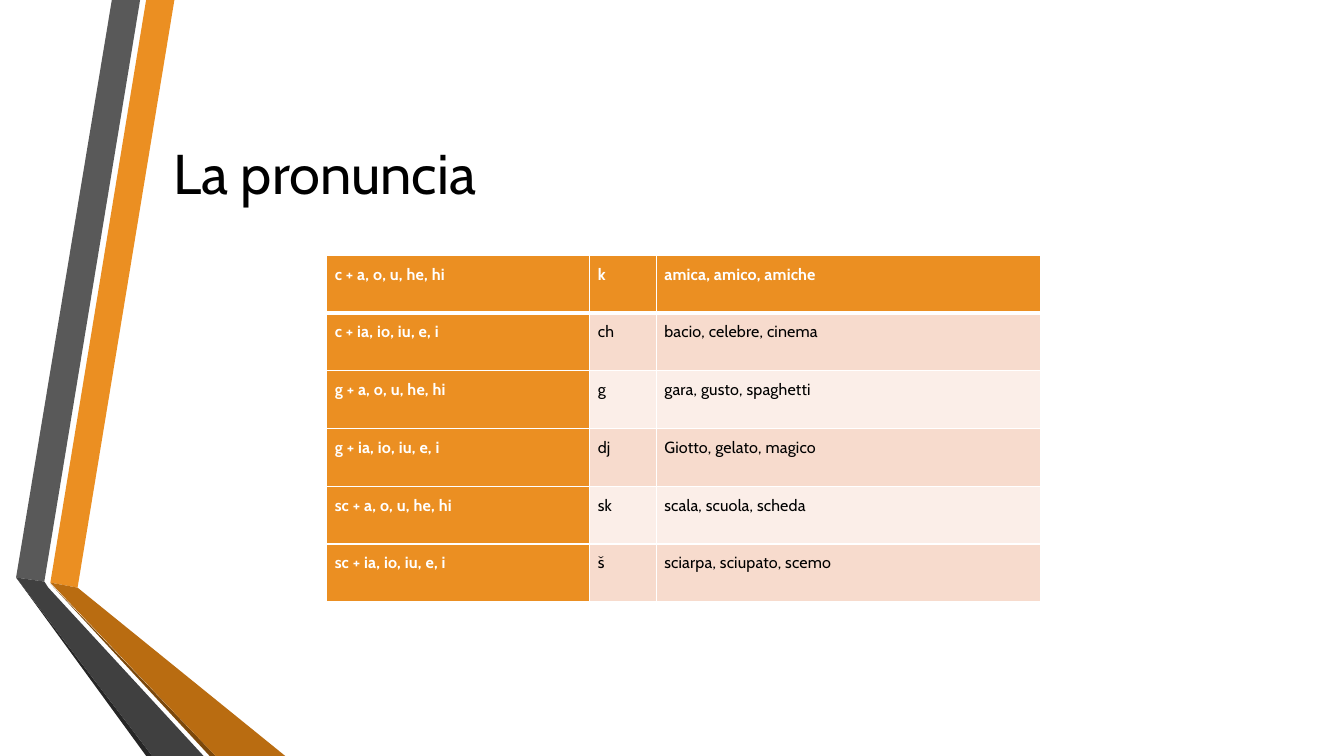
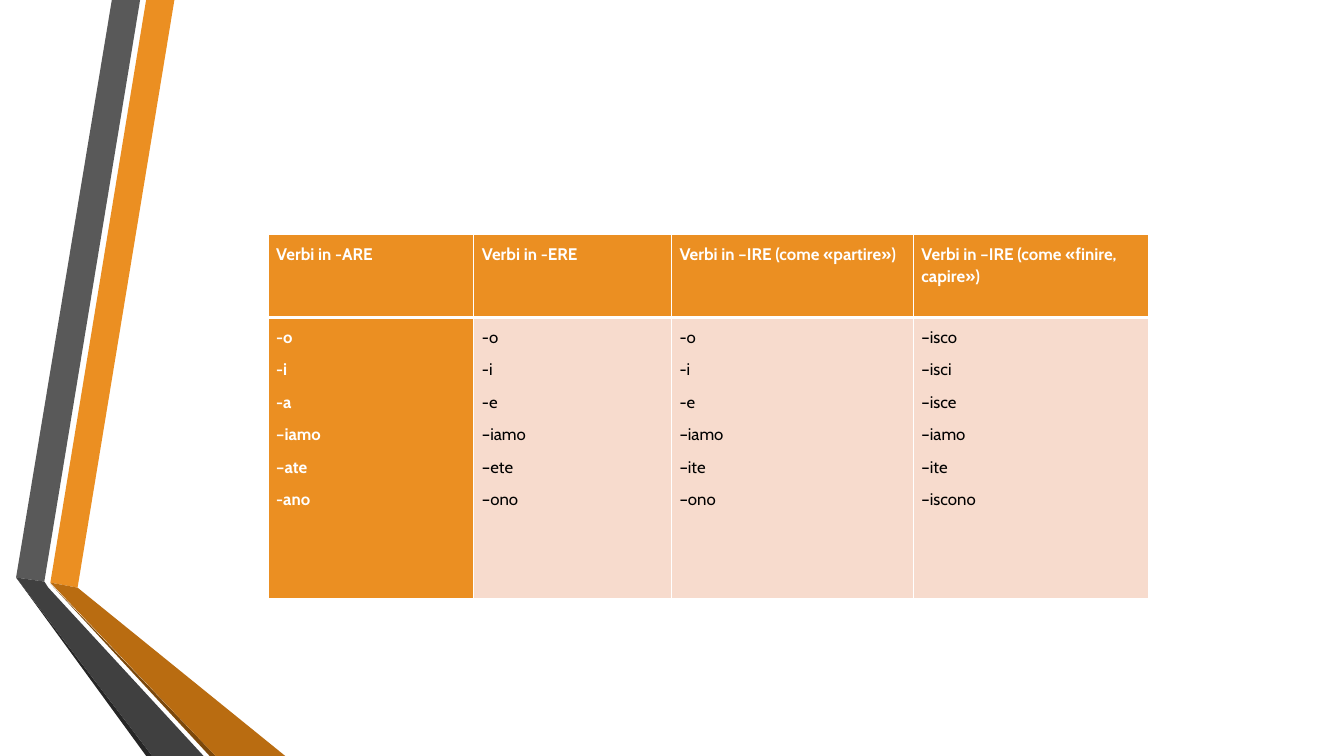
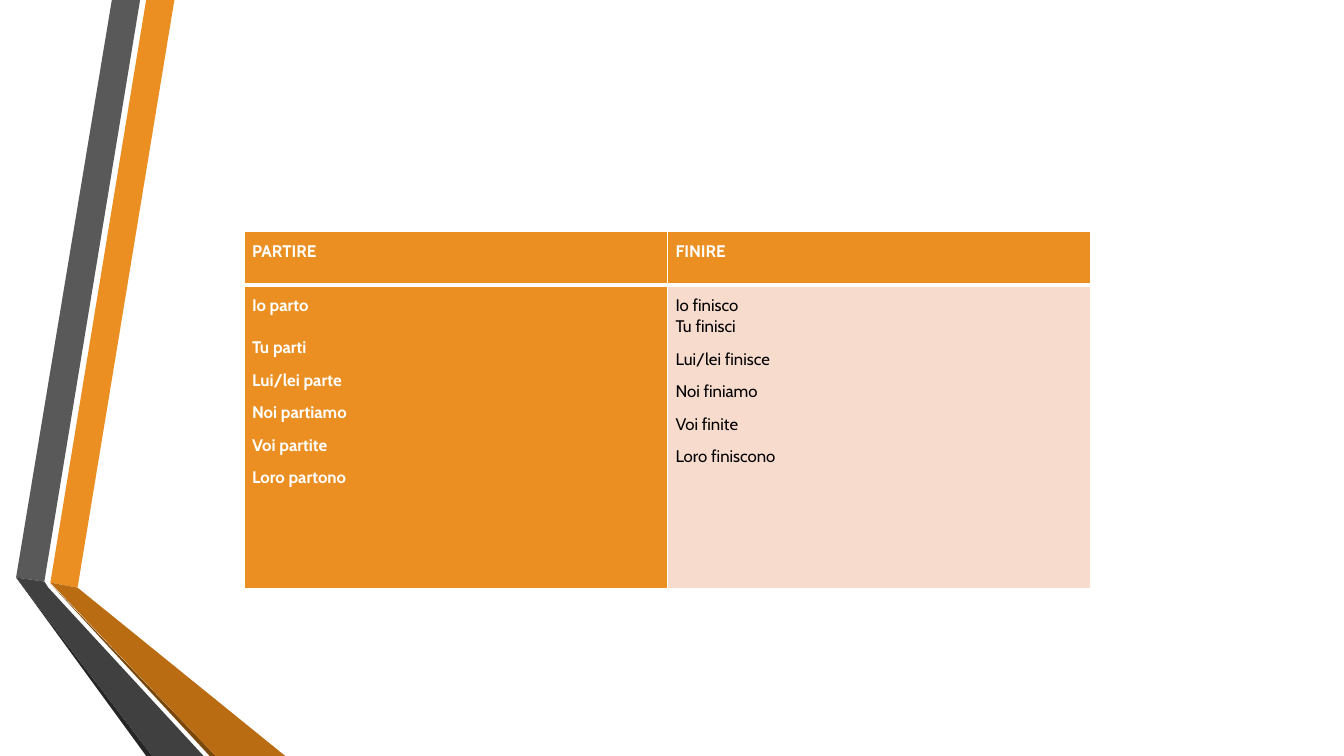
from lxml import etree
from pptx import Presentation
from pptx.dml.color import RGBColor
from pptx.enum import text
from pptx.oxml import ns
from pptx.util import Inches, Pt

FONT = "Cabin"
WHITE, BLACK, ORANGE = "FFFFFF", "000000", "EB8F22"
BANDS = ("F7DBCD", "FBEEE8")
RIBBONS = (
    (ORANGE, ((0.5, 5.78), (0.77, 5.83), (1.73, 0), (1.45, 0))),
    ("595959", ((1.39, 0), (1.11, 0), (0.16, 5.73), (0.44, 5.77))),
    ("262626", ((0.16, 5.73), (1.45, 7.5), (1.51, 7.5))),
    ("7B480B", ((0.5, 5.79), (2.08, 7.5), (2.14, 7.5))),
    ("B96C11", ((0.5, 5.78), (2.14, 7.5), (2.83, 7.5), (0.77, 5.83))),
    ("404040", ((2.02, 7.5), (0.48, 5.83), (0.44, 5.77), (0.16, 5.73), (1.51, 7.5))),
)
PRONUNCIATION = (
    ("c + a, o, u, he, hi", "k", "amica, amico, amiche"),
    ("c + ia, io, iu, e, i", "ch", "bacio, celebre, cinema"),
    ("g + a, o, u, he, hi", "g", "gara, gusto, spaghetti"),
    ("g + ia, io, iu, e, i", "dj", "Giotto, gelato, magico"),
    ("sc + a, o, u, he, hi", "sk", "scala, scuola, scheda"),
    ("sc + ia, io, iu, e, i", "š", "sciarpa, sciupato, scemo"),
)
ENDINGS = (
    ("Verbi in -ARE", "Verbi in -ERE", "Verbi in –IRE (come «partire»)",
     "Verbi in –IRE (come «finire, capire»)"),
    ("-o\n-i\n-a\n–iamo\n–ate\n-ano", "-o\n-i\n-e\n–iamo\n–ete\n–ono",
     "-o\n-i\n-e\n–iamo\n–ite\n–ono", "–isco\n–isci\n–isce\n–iamo\n–ite\n–iscono"),
)
CONJUGATION = (
    ("PARTIRE", "FINIRE"),
    ("Io parto\nTu parti\nLui/lei parte\nNoi partiamo\nVoi partite\nLoro partono",
     "Io finisco\nTu finisci\nLui/lei finisce\nNoi finiamo\nVoi finite\nLoro finiscono"),
)


def color(value):
    """Turn a hex string into a colour."""
    return RGBColor.from_string(value)


def add_ribbons(slide, left=0, top=0):
    """Draw the folded ribbons from the given corner."""
    for fill, corners in RIBBONS:
        points = [(Inches(left + x), Inches(top + y)) for x, y in corners]
        builder = slide.shapes.build_freeform(*points[0], scale=1.0)
        builder.add_line_segments(points[1:], close=True)
        shape = builder.convert_to_shape()
        shape.shadow.inherit = False
        shape.fill.solid()
        shape.fill.fore_color.rgb = color(fill)
        shape.line.fill.background()


def add_slide(presentation, title=None):
    """Add a slide with ribbons and, if given, a title."""
    slide = presentation.slides.add_slide(presentation.slide_layouts[5 if title else 6])
    add_ribbons(slide)
    if title:
        shape = slide.shapes.title
        shape.left, shape.top = Inches(1.62), Inches(0.75)
        shape.width, shape.height = Inches(10.96), Inches(1.92)
        frame = shape.text_frame
        frame.text = title
        frame.vertical_anchor = text.MSO_ANCHOR.MIDDLE
        paragraph = frame.paragraphs[0]
        paragraph.alignment = text.PP_ALIGN.LEFT
        font = paragraph.runs[0].font
        font.name, font.size, font.color.rgb = FONT, Pt(40), color(BLACK)
    return slide


def add_borders(cell, top, bottom):
    """Give a cell white borders, with top and bottom widths in points."""
    properties = cell._tc.get_or_add_tcPr()
    for side, width in (("L", 1), ("R", 1), ("T", top), ("B", bottom)):
        line = etree.SubElement(properties, ns.qn(f"a:ln{side}"), w=str(Pt(width)))
        fill = etree.SubElement(line, ns.qn("a:solidFill"))
        etree.SubElement(fill, ns.qn("a:srgbClr"), val=WHITE)


def format_cell(cell, row, column, size):
    """Style a cell by its place in the table."""
    heading = row == 0 or column == 0
    add_borders(cell, 3 if row == 1 else 1, 3 if row == 0 else 1)
    cell.fill.solid()
    cell.fill.fore_color.rgb = color(ORANGE if heading else BANDS[(row - 1) % 2])
    cell.margin_left = cell.margin_right = Inches(0.08)
    cell.margin_top = cell.margin_bottom = Inches(0.08)
    for paragraph in cell.text_frame.paragraphs:
        paragraph.line_spacing = 1.07
        for run in paragraph.runs:
            font = run.font
            font.name, font.size, font.bold = FONT, Pt(size), heading
            font.color.rgb = color(WHITE if heading else BLACK)


def add_table(slide, box, widths, heights, rows, size=12):
    """Place a table with an orange first row and column."""
    left, top, width, height = map(Inches, box)
    shape = slide.shapes.add_table(len(rows), len(widths), left, top, width, height)
    table = shape.table
    for column, length in zip(table.columns, widths):
        column.width = Inches(length)
    for row, length in zip(table.rows, heights):
        row.height = Inches(length)
    for r, words in enumerate(rows):
        for c, word in enumerate(words):
            cell = table.cell(r, c)
            cell.text_frame.text = word
            format_cell(cell, r, c, size)
    return shape


def space_paragraphs(table):
    """Set the gaps after the headings and the listed forms."""
    for r, row in enumerate(table.rows):
        for cell in row.cells:
            for paragraph in cell.text_frame.paragraphs:
                paragraph.space_after = Pt(7.5 if r else 15)


def add_pronunciation(presentation):
    """Build the slide on pronunciation."""
    slide = add_slide(presentation, "La pronuncia")
    count = len(PRONUNCIATION)
    shape = add_table(slide, (3.24, 2.53, 7.08, 3.44), (2.61, 0.66, 3.81),
                      [3.44 / count] * count, PRONUNCIATION, 11.5)
    for properties in shape.element.iter(ns.qn("a:rPr")):
        properties.set("spc", "10")


def add_endings(presentation):
    """Build the slide on verb endings."""
    shape = add_table(add_slide(presentation), (2.66, 2.33, 8.73, 3.61),
                      (2.04, 1.96, 2.4, 2.33), (0.82, 2.79), ENDINGS)
    space_paragraphs(shape.table)


def add_conjugation(presentation):
    """Build the slide that conjugates two verbs."""
    shape = add_table(add_slide(presentation), (2.42, 2.3, 8.4, 3.54),
                      (4.2, 4.2), (0.53, 3.01), CONJUGATION)
    space_paragraphs(shape.table)
    for column, gap in enumerate((15, 0)):
        shape.table.cell(1, column).text_frame.paragraphs[0].space_after = Pt(gap)


def main():
    """Build and save the presentation."""
    presentation = Presentation()
    presentation.slide_width, presentation.slide_height = Inches(13.33), Inches(7.5)
    add_pronunciation(presentation)
    add_endings(presentation)
    add_conjugation(presentation)
    presentation.save("out.pptx")


if __name__ == "__main__":
    main()
